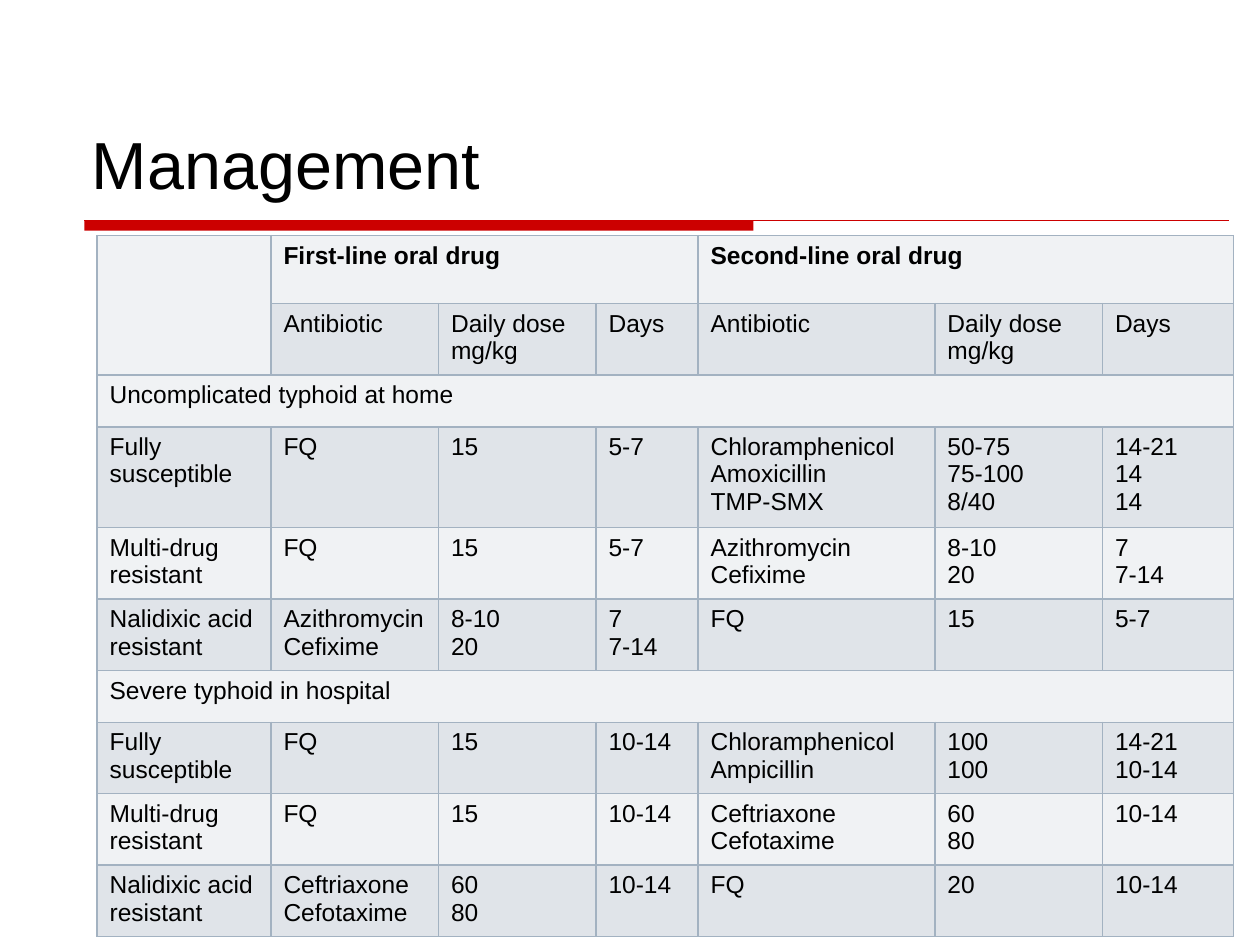
from lxml.etree import SubElement
from pptx import Presentation
from pptx.dml.color import RGBColor
from pptx.enum.shapes import MSO_CONNECTOR, MSO_SHAPE
from pptx.enum.text import MSO_ANCHOR
from pptx.oxml.ns import qn
from pptx.util import Inches, Pt

UNIT = 0.1  # the slide is a grid of 100 columns by 75 rows


def grid(*cells):
    return [Inches(n * UNIT) for n in cells]


def color(code):
    return RGBColor.from_string(code)


class Deck:
    font, ink, red = "Arial", "000000", "CC0000"
    bands, edge = ("F0F2F4", "E0E4E9"), "A3B2C1"

    def __init__(self):
        self.file = Presentation()
        self.file.slide_width, self.file.slide_height = grid(100, 75)
        self.slide = self.file.slides.add_slide(self.file.slide_layouts[6])

    def style(self, frame, size, bold=False):
        for par in frame.paragraphs:
            font = par.font
            font.name, font.size, font.bold = self.font, Pt(size), bold
            font.color.rgb = color(self.ink)

    def title(self, text, box):
        frame = self.slide.shapes.add_textbox(*grid(*box)).text_frame
        frame.word_wrap = True
        frame.vertical_anchor = MSO_ANCHOR.BOTTOM
        frame.text = text
        self.style(frame, 38)

    def bar(self, box):
        bar = self.slide.shapes.add_shape(MSO_SHAPE.RECTANGLE, *grid(*box))
        bar.shadow.inherit = False
        bar.fill.solid()
        bar.fill.fore_color.rgb = color(self.red)
        bar.line.fill.background()

    def rule(self, ends):
        rule = self.slide.shapes.add_connector(MSO_CONNECTOR.STRAIGHT, *grid(*ends))
        rule.line.color.rgb = color(self.red)
        rule.line.width = Pt(0.75)
        SubElement(rule._element.spPr, qn("a:effectLst"))

    def border(self, cell):
        props = cell._tc.get_or_add_tcPr()
        for side in ("lnL", "lnR", "lnT", "lnB"):
            line = SubElement(props, qn("a:" + side), w=str(Pt(1)))
            fill = SubElement(line, qn("a:solidFill"))
            SubElement(fill, qn("a:srgbClr"), val=self.edge)

    def table(self, left, top, cols, rows, data, spans):
        box = grid(left, top, sum(cols), sum(rows))
        table = self.slide.shapes.add_table(len(rows), len(cols), *box).table
        table.first_row = table.horz_banding = False
        for part, size in zip(table.columns, grid(*cols)):
            part.width = size
        for part, size in zip(table.rows, grid(*rows)):
            part.height = size
        for r, line in enumerate(data):
            for c in range(len(cols)):
                cell = table.cell(r, c)
                cell.text = line[c] if c < len(line) else ""
                self.style(cell.text_frame, 14, bold=r == 0)
                self.border(cell)
                cell.fill.solid()
                cell.fill.fore_color.rgb = color(self.bands[r % 2])
        for r, c, high, wide in spans:
            table.cell(r, c).merge(table.cell(r + high - 1, c + wide - 1))


# Contents: a line break starts a new paragraph in the cell
FULL, MULTI, ACID = "Fully susceptible", "Multi-drug resistant", "Nalidixic acid resistant"
HEADS = ["Antibiotic", "Daily dose mg/kg", "Days"]
AZI = ["Azithromycin\nCefixime", "8-10\n20", "7\n7-14"]
CEF = ["Ceftriaxone\nCefotaxime", "60\n80", "10-14"]
HOME, WARD = ["FQ", "15", "5-7"], ["FQ", "15", "10-14"]
DATA = [
    ["", "First-line oral drug", "", "", "Second-line oral drug"],
    ["", *HEADS, *HEADS],
    ["Uncomplicated typhoid at home"],
    [FULL, *HOME, "Chloramphenicol\nAmoxicillin\nTMP-SMX",
     "50-75\n75-100\n8/40", "14-21\n14\n14"],
    [MULTI, *HOME, *AZI],
    [ACID, *AZI, *HOME],
    ["Severe typhoid in hospital"],
    [FULL, *WARD, "Chloramphenicol\nAmpicillin", "100\n100", "14-21\n10-14"],
    [MULTI, *WARD, *CEF],
    [ACID, *CEF, "FQ", "20", "10-14"],
]
SPANS = [(0, 0, 2, 1), (0, 1, 1, 3), (0, 4, 1, 3), (2, 0, 1, 7), (6, 0, 1, 7)]
COLS = [13.8, 13.3, 12.5, 8.1, 18.8, 13.3, 10.4]

# Row heights by number of text lines
ONE, TWO, THREE = 4.1, 5.4, 7.6
ROWS = [TWO, TWO, ONE, THREE, TWO, TWO, ONE, TWO, TWO, TWO]


def main():
    deck = Deck()
    # Heading with its red rule
    deck.bar((6.7, 17.5, 53.1, 0.8))
    deck.rule((6.7, 17.5, 97.5, 17.5))
    deck.title("Management", (6.3, 3.3, 87.5, 13.3))
    # Drug table
    deck.table(7.7, 18.7, COLS, ROWS, DATA, SPANS)
    deck.file.save("out.pptx")


if __name__ == "__main__":
    main()
